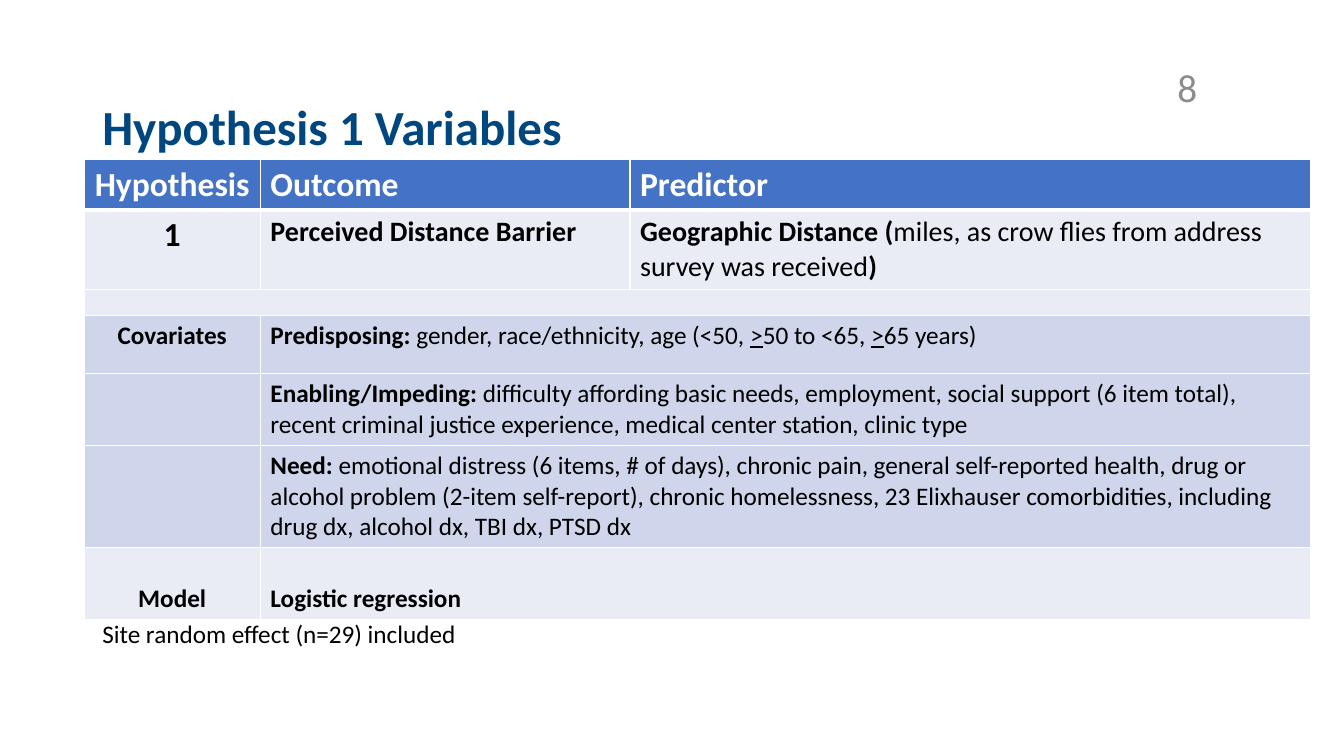
"""Build the slide listing the variables of hypothesis 1."""
from lxml.etree import SubElement
from pptx import Presentation
from pptx.dml.color import RGBColor
from pptx.enum.text import MSO_ANCHOR, PP_ALIGN
from pptx.oxml.ns import qn
from pptx.util import Inches, Pt

THEME = {
    "font": "Calibri", "title": "00467F", "number": "8C8C8C", "text": "000000",
    "white": "FFFFFF", "head": "4472C4", "light": "E9EBF5", "dark": "CFD5EA",
    "huge": 35, "page": 28, "large": 24, "mid": 20, "body": 18, "tiny": 9,
}
UNIT = Inches(1) / 12


def grid(*steps):
    """Turn steps of a 160 by 90 grid into lengths."""
    return [round(step * UNIT) for step in steps]


def write(para, runs, size, color):
    """Add runs, each a text with the style letters b and u."""
    for text, style in runs:
        run = para.add_run()
        run.text = text
        look = {"name": THEME["font"], "size": Pt(THEME[size]),
                "bold": "b" in style, "underline": "u" in style}
        for key, value in look.items():
            setattr(run.font, key, value)
        run.font.color.rgb = RGBColor.from_string(THEME[color])


deck = Presentation()
deck.slide_width, deck.slide_height = grid(160, 90)
slide = deck.slides.add_slide(deck.slide_layouts[6])

labels = [
    ((11, 8.5, 138, 13.8), "Hypothesis 1 Variables", "b", "huge", "title", MSO_ANCHOR.MIDDLE, 0.9),
    ((139, 7, 7.2, 6.1), "8", "", "page", "number", MSO_ANCHOR.TOP, 1.0),
    ((11, 73, 104, 4.8), "Site random effect (n=29) included", "", "body", "text", MSO_ANCHOR.TOP, 1.0),
]
for place, text, style, size, color, anchor, space in labels:
    frame = slide.shapes.add_textbox(*grid(*place)).text_frame
    frame.word_wrap = True
    frame.vertical_anchor = anchor
    frame.paragraphs[0].line_spacing = space
    write(frame.paragraphs[0], [(text, style)], size, color)

TOP, BOTTOM = MSO_ANCHOR.TOP, MSO_ANCHOR.BOTTOM
rows = [
    (5.84, "head", "white", TOP, ["large"] * 3,
     [[("Hypothesis", "b")], [("Outcome", "b")], [("Predictor", "b")]]),
    (9.5, "light", "text", TOP, ["large", "mid", "mid"],
     [[("1", "b")], [("Perceived Distance Barrier", "b")],
      [("Geographic Distance (", "b"),
       ("miles, as crow flies from address survey was received", ""), (")", "b")]]),
    (3, "light", "text", TOP, ["tiny"], [[]]),
    (7, "dark", "text", TOP, ["body"] * 2,
     [[("Covariates", "b")],
      [("Predisposing: ", "b"), ("gender, race/ethnicity, age (<50, ", ""), (">", "u"),
       ("50 to <65, ", ""), (">", "u"), ("65 years)", "")]]),
    (8.5, "dark", "text", TOP, ["body"] * 2,
     [[], [("Enabling/Impeding: ", "b"),
           ("difficulty affording basic needs, employment, social support (6 item total), "
            "recent criminal justice experience, medical center station, clinic type", "")]]),
    (12.2, "dark", "text", TOP, ["body"] * 2,
     [[], [("Need: ", "b"),
           ("emotional distress (6 items, # of days), chronic pain, general self-reported "
            "health, drug or alcohol problem (2-item self-report), chronic homelessness, "
            "23 Elixhauser comorbidities, including drug dx, alcohol dx, TBI dx, PTSD dx", "")]]),
    (8.5, "light", "text", BOTTOM, ["body"] * 2,
     [[("Model", "b")], [("Logistic regression", "b")]]),
]
cols = (21, 44, 81)
high = sum(row[0] for row in rows)
table = slide.shapes.add_table(len(rows), len(cols), *grid(10, 19, sum(cols), high)).table
table.first_row = table.horz_banding = False
for col, width in zip(table.columns, grid(*cols)):
    col.width = width

for r, (height, fill, color, anchor, sizes, texts) in enumerate(rows):
    table.rows[r].height = grid(height)[0]
    last = len(texts) - 1
    if last < 2:
        table.cell(r, last).merge(table.cell(r, 2))
    for c in range(len(cols)):
        cell = table.cell(r, c)
        cell.vertical_anchor = anchor
        props = cell._tc.get_or_add_tcPr()
        for side in "LRTB":
            thick = 3 if (r, side) in ((0, "B"), (1, "T")) else 1
            line = SubElement(props, qn(f"a:ln{side}"), w=str(Pt(thick)))
            SubElement(SubElement(line, qn("a:solidFill")), qn("a:srgbClr"), val=THEME["white"])
        cell.fill.solid()
        cell.fill.fore_color.rgb = RGBColor.from_string(THEME[fill])
        para = cell.text_frame.paragraphs[0]
        para.alignment = PP_ALIGN.LEFT if c else PP_ALIGN.CENTER
        if c <= last and texts[c]:
            write(para, texts[c], sizes[c], color)
        else:
            SubElement(para._p, qn("a:endParaRPr"), sz=str(THEME["tiny"] * 100))

deck.save("out.pptx")
